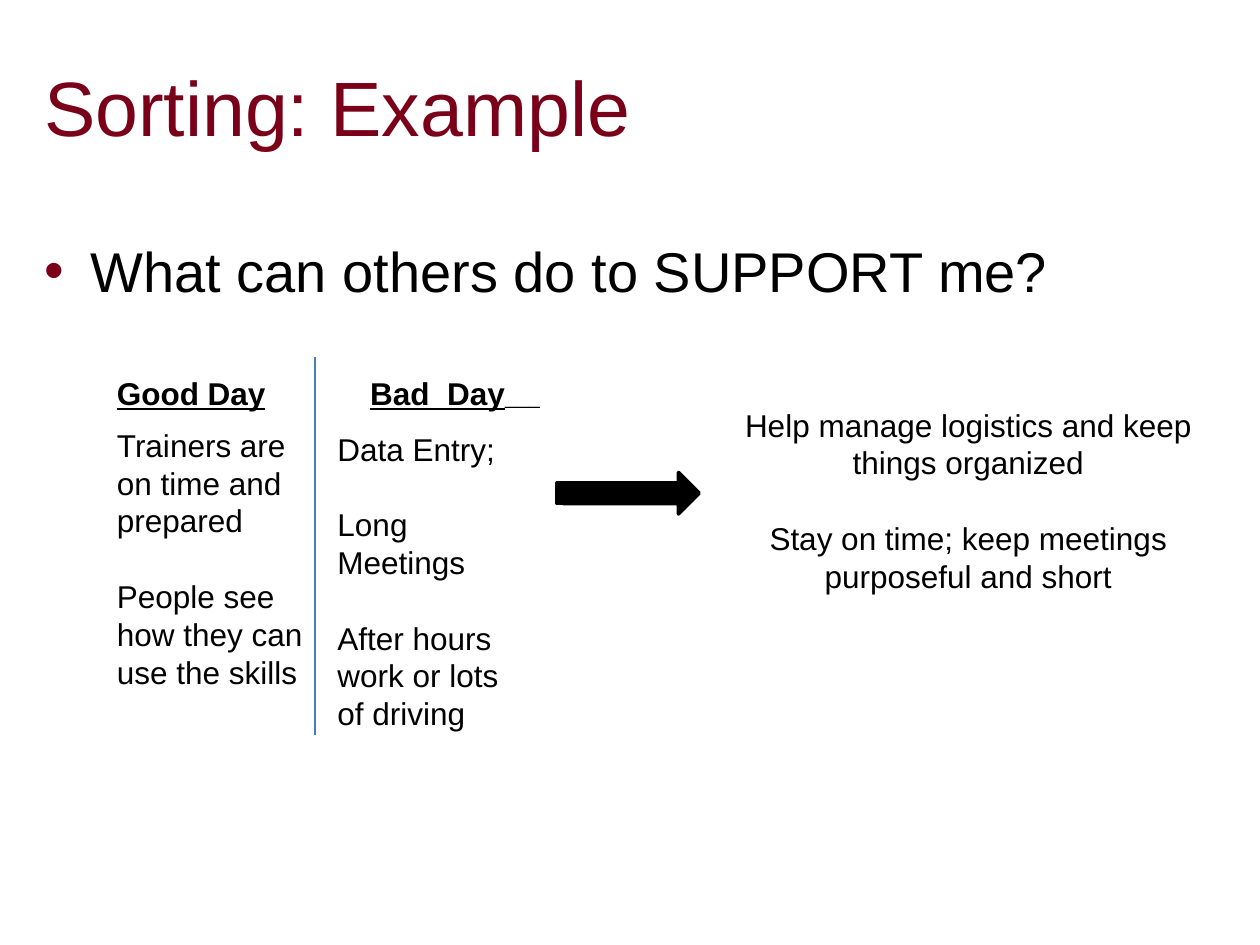
from dataclasses import dataclass

from lxml import etree
from pptx import Presentation
from pptx.dml.color import RGBColor
from pptx.enum.shapes import MSO_CONNECTOR, MSO_SHAPE
from pptx.enum.text import MSO_ANCHOR, MSO_AUTO_SIZE, PP_ALIGN
from pptx.oxml.ns import qn
from pptx.shapes.base import BaseShape
from pptx.slide import Slide
from pptx.util import Inches, Pt

LEFT, CENTER = PP_ALIGN.LEFT, PP_ALIGN.CENTER
TOP, MIDDLE = MSO_ANCHOR.TOP, MSO_ANCHOR.MIDDLE
NO_AUTOFIT = MSO_AUTO_SIZE.NONE
STRAIGHT = MSO_CONNECTOR.STRAIGHT
STRIPED_ARROW = MSO_SHAPE.STRIPED_RIGHT_ARROW

FONT = "Arial"
COLORS = {"maroon": "7A0019", "black": "000000", "divider": "4A7DBB"}
TEXT_SIZE = 18
PARAGRAPH_GAP = 21.6


@dataclass
class TextBlock:
    left: float
    top: float
    width: float
    height: float
    paragraphs: list[str]
    alignment: PP_ALIGN = LEFT


HEADING = TextBlock(0.83, 2.92, 3.83, 0.37, ["Good Day\tBad  Day"])
ANSWERS = [
    TextBlock(0.83, 3.33, 1.75, 2.47, [
        "Trainers are on time and prepared",
        "People see how they can use the skills",
    ]),
    TextBlock(2.58, 3.36, 1.75, 2.72, [
        "Data Entry;",
        "Long Meetings",
        "After hours work or lots of driving",
    ]),
    TextBlock(5.77, 3.17, 3.83, 1.25, [
        "Help manage logistics and keep things organized",
        "Stay on time; keep meetings purposeful and short",
    ], CENTER),
]


def color(name: str) -> RGBColor:
    return RGBColor.from_string(COLORS[name])


def style_font(font, size: float, color_name: str) -> None:
    font.name = FONT
    font.size = Pt(size)
    font.color.rgb = color(color_name)


def place(shape: BaseShape, left: float, top: float, width: float, height: float) -> None:
    shape.left, shape.top = Inches(left), Inches(top)
    shape.width, shape.height = Inches(width), Inches(height)


def fill_placeholder(shape: BaseShape, text: str, size: float, color_name: str, anchor: MSO_ANCHOR):
    """Write one left-aligned paragraph and return it."""
    frame = shape.text_frame
    frame.text = text
    frame.auto_size = NO_AUTOFIT
    frame.vertical_anchor = anchor
    paragraph = frame.paragraphs[0]
    paragraph.alignment = LEFT
    style_font(paragraph.font, size, color_name)
    return paragraph


def set_bullet(paragraph, color_name: str, indent: float) -> None:
    properties = paragraph._p.get_or_add_pPr()
    properties.set("marL", str(Inches(indent)))
    properties.set("indent", str(-Inches(indent)))
    bullet_color = etree.Element(qn("a:buClr"))
    etree.SubElement(bullet_color, qn("a:srgbClr"), val=COLORS[color_name])
    properties.insert(0, bullet_color)


def add_text_block(slide: Slide, block: TextBlock):
    """Add a wrapping text box and return its text frame."""
    shape = slide.shapes.add_textbox(
        Inches(block.left), Inches(block.top), Inches(block.width), Inches(block.height))
    frame = shape.text_frame
    frame.word_wrap = True
    frame.text = "\n".join(block.paragraphs)
    for index, paragraph in enumerate(frame.paragraphs):
        paragraph.alignment = block.alignment
        if index:
            paragraph.space_before = Pt(PARAGRAPH_GAP)
        style_font(paragraph.font, TEXT_SIZE, "black")
    return frame


def add_heading(slide: Slide) -> None:
    """Add both column headings on one underlined line."""
    paragraph = add_text_block(slide, HEADING).paragraphs[0]
    tab_list = etree.Element(qn("a:tabLst"))
    etree.SubElement(tab_list, qn("a:tab"), pos=str(Inches(2.01)), algn="l")
    paragraph._p.get_or_add_pPr().insert(0, tab_list)
    paragraph.font.bold = True
    paragraph.font.underline = True
    line_end = paragraph.add_run()
    line_end.text = "___"
    line_end.font.size = Pt(12)
    for run in paragraph.runs:
        run.font.bold = True
        run.font.underline = True


def add_divider(slide: Slide) -> None:
    divider = slide.shapes.add_connector(
        STRAIGHT, Inches(2.5), Inches(2.83), Inches(2.5), Inches(5.83))
    divider.line.color.rgb = color("divider")
    divider.line.width = Pt(0.75)
    etree.SubElement(divider._element.spPr, qn("a:effectLst"))


def add_arrow(slide: Slide) -> None:
    arrow = slide.shapes.add_shape(
        STRIPED_ARROW, Inches(4.42), Inches(3.75), Inches(1.13), Inches(0.33))
    arrow.shadow.inherit = False
    arrow.fill.solid()
    arrow.fill.fore_color.rgb = color("black")
    arrow.line.color.rgb = color("black")
    arrow.line.width = Pt(2)


def main() -> None:
    presentation = Presentation()
    presentation.slide_width, presentation.slide_height = Inches(10), Inches(7.5)
    slide = presentation.slides.add_slide(presentation.slide_layouts[1])

    title, body = slide.shapes.title, slide.placeholders[1]
    place(title, 0.25, 0.42, 9.5, 0.83)
    fill_placeholder(title, "Sorting: Example", 44, "maroon", MIDDLE)
    place(body, 0.25, 1.83, 9.5, 4.83)
    question = fill_placeholder(body, "What can others do to SUPPORT me?", 32, "black", TOP)
    set_bullet(question, "maroon", 0.37)

    add_heading(slide)
    add_divider(slide)
    for block in ANSWERS:
        add_text_block(slide, block)
    add_arrow(slide)
    presentation.save("out.pptx")


if __name__ == "__main__":
    main()
